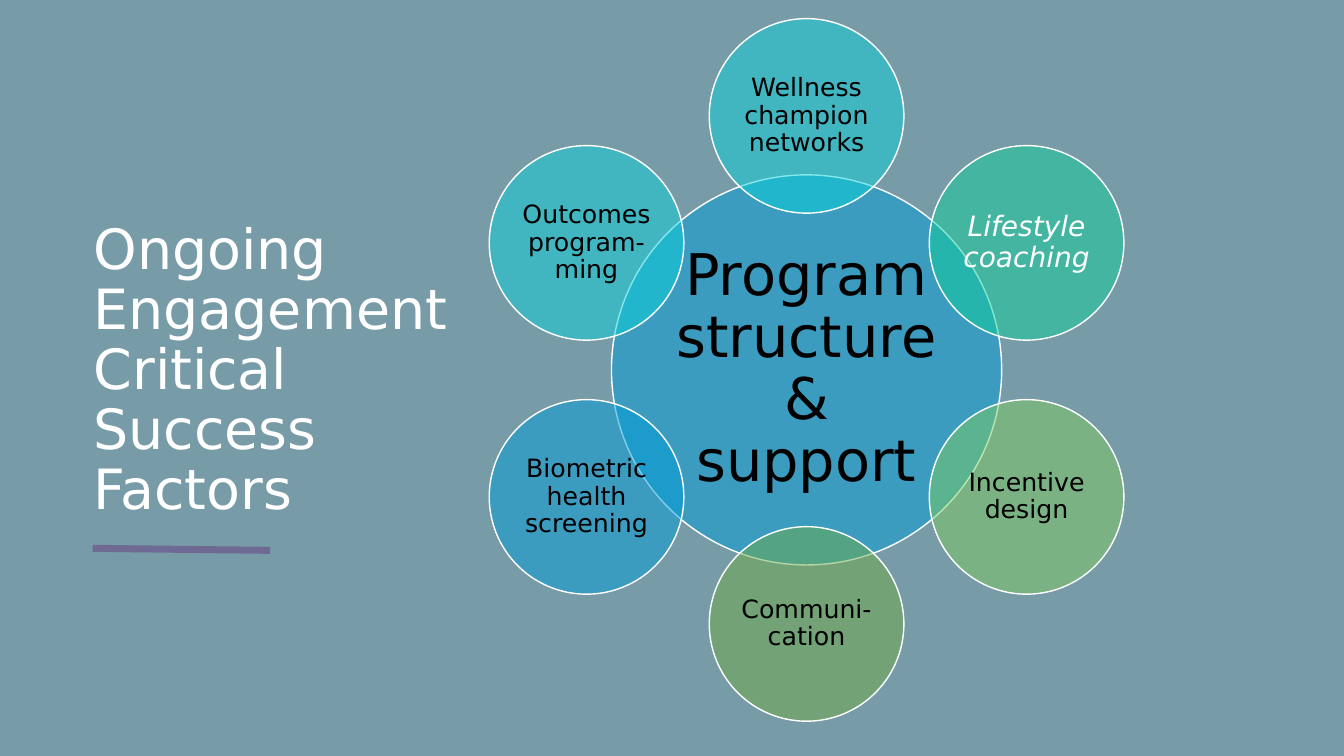
import math

import pptx
import pptx.dml.color
import pptx.enum.shapes
import pptx.enum.text
import pptx.oxml
import pptx.oxml.ns
import pptx.util
from pptx.util import Inches

FONT = "DejaVu Sans"
COLORS = {
    "background": "789BA8",
    "white": "FFFFFF",
    "black": "000000",
    "blue": "009DD9",
    "cyan": "0BD0D9",
    "teal": "10CF9B",
    "light green": "7CCA62",
    "green": "6EAA46",
    "purple": "6E6A94",
}


def rgb(name):
    return pptx.dml.color.RGBColor.from_string(COLORS[name])


def add_circle(page, center, diameter, fill, text, size, inset, color="black", italic=None):
    left, top = (value - diameter / 2 for value in center)
    circle = page.shapes.add_shape(
        pptx.enum.shapes.MSO_SHAPE.OVAL,
        Inches(left), Inches(top), Inches(diameter), Inches(diameter))
    circle.shadow.inherit = False
    circle.fill.solid()
    circle.fill.fore_color.rgb = rgb(fill)
    # Half-transparent fill
    fill_color = circle.fill._xPr.find(".//" + pptx.oxml.ns.qn("a:srgbClr"))
    fill_color.append(pptx.oxml.parse_xml(
        f'<a:alpha {pptx.oxml.ns.nsdecls("a")} val="50000"/>'))
    circle.line.color.rgb = rgb("white")
    circle.line.width = pptx.util.Pt(1)

    frame = circle.text_frame
    frame.word_wrap = True
    frame.vertical_anchor = pptx.enum.text.MSO_ANCHOR.MIDDLE
    frame.margin_left = frame.margin_right = Inches(inset)
    frame.margin_top = frame.margin_bottom = Inches(inset)
    para = frame.paragraphs[0]
    para.text = text
    para.alignment = pptx.enum.text.PP_ALIGN.CENTER
    para.line_spacing = 0.9
    para.font.name = FONT
    para.font.size = pptx.util.Pt(size)
    para.font.italic = italic
    para.font.color.rgb = rgb(color)


# Deck and background
deck = pptx.Presentation()
deck.slide_width = Inches(13.33)
deck.slide_height = Inches(7.5)
page = deck.slides.add_slide(deck.slide_layouts[6])
page.background.fill.solid()
page.background.fill.fore_color.rgb = rgb("background")

# Title, raised by its bottom margin
box = page.shapes.add_textbox(Inches(0.83), Inches(3.26), Inches(3.83), Inches(1.45))
frame = box.text_frame
frame.word_wrap = True
frame.vertical_anchor = pptx.enum.text.MSO_ANCHOR.MIDDLE
frame.margin_bottom = Inches(0.65)
para = frame.paragraphs[0]
para.text = "Ongoing Engagement Critical Success Factors"
para.line_spacing = 0.9
para.font.name = FONT
para.font.size = pptx.util.Pt(39.6)
para.font.color.rgb = rgb("white")

# Hub with its ring of success factors, clockwise from the top
hub = (8.0, 3.67)
ring_radius = 2.52
add_circle(page, hub, 3.87, "blue", "Program structure & support", 41, 0.06)

factors = [
    ("Wellness champion networks", "cyan", 18, "black", None),
    ("Lifestyle coaching", "teal", 20, "white", True),
    ("Incentive design", "light green", 18, "black", None),
    ("Communi-cation", "green", 18, "black", None),
    ("Biometric health screening", "blue", 18, "black", None),
    ("Outcomes program-ming", "cyan", 18, "black", None),
]
for index, (text, fill, size, color, italic) in enumerate(factors):
    angle = 2 * math.pi * index / len(factors)
    center = (hub[0] + ring_radius * math.sin(angle), hub[1] - ring_radius * math.cos(angle))
    add_circle(page, center, 1.93, fill, text, size, 0.03, color, italic)

# Accent line under the title
accent = page.shapes.add_connector(
    pptx.enum.shapes.MSO_CONNECTOR.STRAIGHT,
    Inches(0.92), Inches(5.44), Inches(2.68), Inches(5.46))
accent.line.color.rgb = rgb("purple")
accent.line.width = pptx.util.Pt(5)
accent._element.spPr.append(pptx.oxml.parse_xml(
    f'<a:effectLst {pptx.oxml.ns.nsdecls("a")}/>'))

deck.save("out.pptx")
